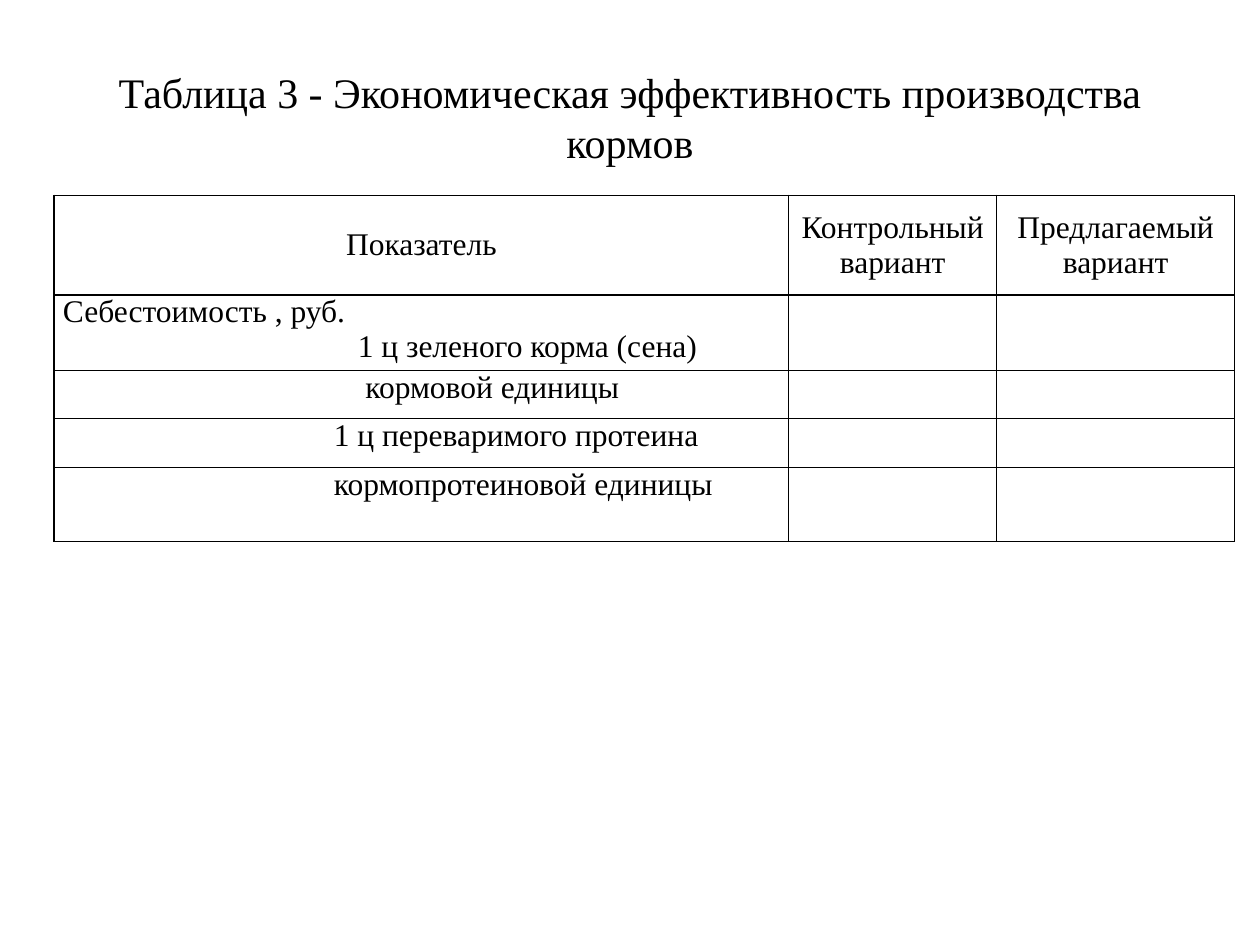
from dataclasses import dataclass

from lxml.etree import SubElement as Sub
from pptx import Presentation
from pptx.dml.color import RGBColor as Rgb
from pptx.enum.text import MSO_ANCHOR as Anchor, PP_ALIGN as Align
from pptx.oxml.ns import qn
from pptx.util import Inches, Pt

FONT = "Times New Roman"
COLORS = {"ink": "000000", "page": "FFFFFF"}
COLS = [5.83, 1.65, 1.89]


@dataclass
class Row:
    height: float
    texts: list[str]
    indent: float = 0  # first-line indent of the last line of the label
    head: bool = False


ROWS = [
    Row(0.79, ["Показатель", "Контрольный\nвариант", "Предлагаемый\nвариант"], head=True),
    Row(0.55, ["Себестоимость , руб.\n1 ц зеленого корма (сена)", "", ""], 2.34),
    Row(0.38, ["кормовой единицы", "", ""], 2.4),
    Row(0.39, ["1 ц переваримого протеина", "", ""], 2.15),
    Row(0.59, ["кормопротеиновой единицы", "", ""], 2.15),
]


def style(frame, size: int, align) -> None:
    for para in frame.paragraphs:
        para.alignment = align
        para.font.size = Pt(size)
        for run in para.runs:
            run.font.name = FONT
            run.font.size = Pt(size)
            run.font.color.rgb = Rgb.from_string(COLORS["ink"])


def border(cell) -> None:
    props = cell._tc.get_or_add_tcPr()
    for spot, side in enumerate(("lnL", "lnR", "lnT", "lnB")):
        line = Sub(props, qn(f"a:{side}"), w=str(Pt(1)))
        fill = Sub(line, qn("a:solidFill"))
        Sub(fill, qn("a:srgbClr"), val=COLORS["ink"])
        props.insert(spot, line)  # borders come before the fill


def fill_cell(cell, text: str, row: Row) -> None:
    cell.margin_left = cell.margin_right = Inches(0.07)
    cell.margin_top = cell.margin_bottom = 0
    cell.vertical_anchor = Anchor.MIDDLE if row.head else Anchor.TOP
    cell.fill.solid()
    cell.fill.fore_color.rgb = Rgb.from_string(COLORS["page"])
    cell.text_frame.text = text
    style(cell.text_frame, 18, Align.CENTER if row.head else Align.JUSTIFY)
    if text and row.indent:
        props = cell.text_frame.paragraphs[-1]._p.get_or_add_pPr()
        props.set("marL", "0")
        props.set("indent", str(Inches(row.indent)))
    border(cell)


def add_title(slide, text: str) -> None:
    box = slide.shapes.add_textbox(Inches(0.5), Inches(0.3), Inches(9), Inches(1.25))
    frame = box.text_frame
    frame.word_wrap = True
    frame.vertical_anchor = Anchor.MIDDLE
    frame.text = text
    style(frame, 24, Align.CENTER)


def add_grid(slide, rows: list[Row]) -> None:
    tall = sum(row.height for row in rows)
    table = slide.shapes.add_table(
        len(rows), len(COLS), Inches(0.43), Inches(1.55), Inches(sum(COLS)), Inches(tall)
    ).table
    table.first_row = table.horz_banding = False
    for col, width in zip(table.columns, COLS):
        col.width = Inches(width)
    for line, row in zip(table.rows, rows):
        line.height = Inches(row.height)
        for cell, text in zip(line.cells, row.texts):
            fill_cell(cell, text, row)


def main() -> None:
    deck = Presentation()
    deck.slide_width, deck.slide_height = Inches(10), Inches(7.5)
    slide = deck.slides.add_slide(deck.slide_layouts[6])
    # Heading
    add_title(slide, "Таблица 3 - Экономическая эффективность производства\vкормов")
    # Cost table
    add_grid(slide, ROWS)
    deck.save("out.pptx")


if __name__ == "__main__":
    main()
